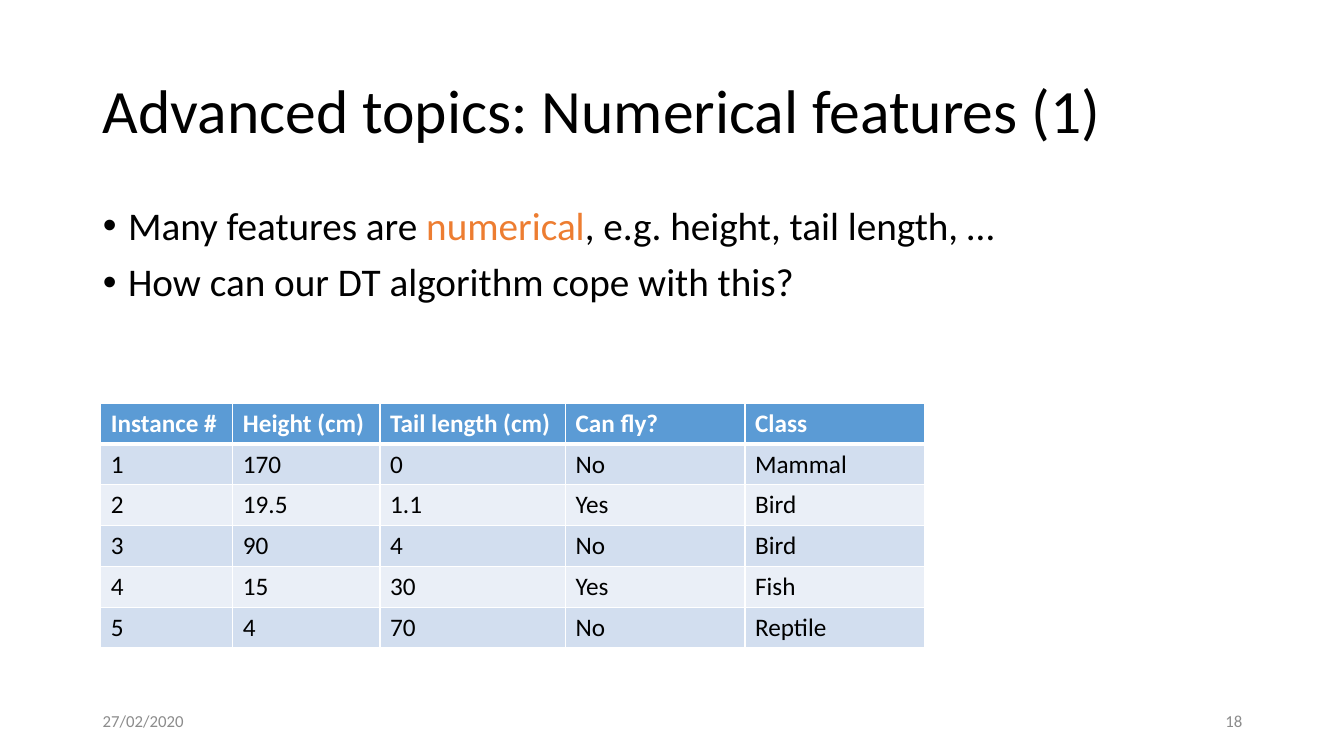
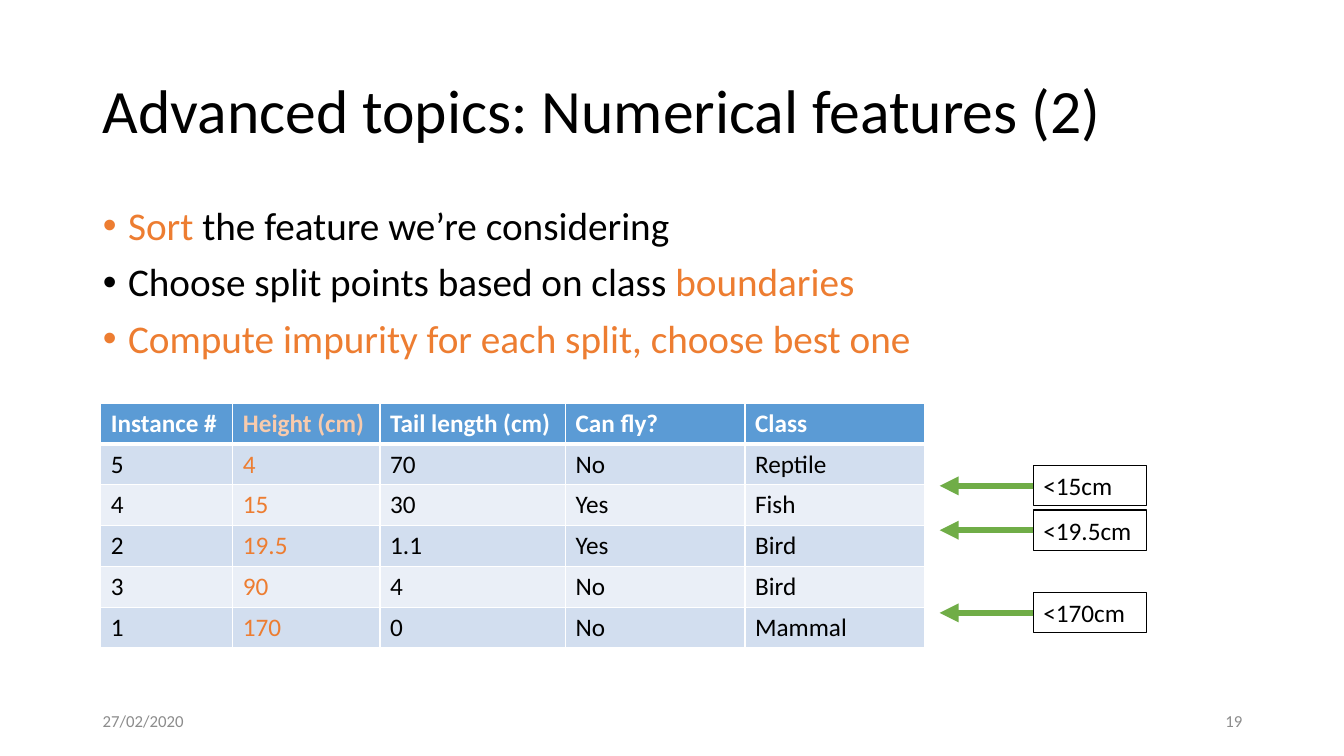
from lxml.etree import SubElement
from pptx import Presentation
from pptx.dml.color import RGBColor
from pptx.enum.shapes import MSO_CONNECTOR, MSO_SHAPE
from pptx.enum.text import MSO_ANCHOR, PP_ALIGN
from pptx.oxml.ns import qn
from pptx.util import Inches, Pt

BLACK = RGBColor(0x00, 0x00, 0x00)
WHITE = RGBColor(0xFF, 0xFF, 0xFF)
GREY = RGBColor(0x8C, 0x8C, 0x8C)
ORANGE = RGBColor(0xED, 0x7D, 0x31)
PEACH = RGBColor(0xF8, 0xCB, 0xAD)
GREEN = RGBColor(0x70, 0xAD, 0x47)
BLUE = RGBColor(0x5B, 0x9B, 0xD5)
BANDS = RGBColor(0xD2, 0xDE, 0xEF), RGBColor(0xEA, 0xEF, 0xF7)

FONT = "Calibri"
DATE = "27/02/2020"
HEADS = ["Instance #", "Height (cm)", "Tail length (cm)", "Can fly?", "Class"]
WIDTHS = [1.31, 1.46, 1.84, 1.78, 1.78]
ROWS = [
    ["1", "170", "0", "No", "Mammal"],
    ["2", "19.5", "1.1", "Yes", "Bird"],
    ["3", "90", "4", "No", "Bird"],
    ["4", "15", "30", "Yes", "Fish"],
    ["5", "4", "70", "No", "Reptile"],
]
KEY = 1
SPLITS = [("<15cm", 4.62), ("<19.5cm", 5.06), ("<170cm", 5.88)]


def write(para, text, size=18, color=BLACK, bold=False, align=PP_ALIGN.LEFT,
          lead=None, before=None):
    """Fill a paragraph, with the parts between asterisks in orange."""
    para.alignment = align
    para.line_spacing = lead
    para.space_before = before
    for num, part in enumerate(text.split("*")):
        if part:
            run = para.add_run()
            run.text = part
            run.font.name = FONT
            run.font.size = Pt(size)
            run.font.bold = bold
            run.font.color.rgb = ORANGE if num % 2 else color


def place(shape, left, top, width, height):
    """Move a shape to a box given in inches."""
    shape.left, shape.top = Inches(left), Inches(top)
    shape.width, shape.height = Inches(width), Inches(height)


def add_foot(slide, text, left, top, align):
    """Add one footer text."""
    box = slide.shapes.add_textbox(
        Inches(left), Inches(top), Inches(3), Inches(0.4))
    box.text_frame.word_wrap = True
    box.text_frame.vertical_anchor = MSO_ANCHOR.MIDDLE
    write(box.text_frame.paragraphs[0], text, size=12, color=GREY, align=align)


def add_list(body, items):
    """Fill the body placeholder with bulleted items."""
    frame = body.text_frame
    for num, item in enumerate(items):
        para = frame.add_paragraph() if num else frame.paragraphs[0]
        write(para, item, size=28, lead=0.9, before=Pt(10))
        props = para._p.get_or_add_pPr()
        props.set("marL", str(Inches(0.25)))
        props.set("indent", str(-Inches(0.25)))


def add_page(deck, title, items, page):
    """Add a slide with title, list and footers."""
    slide = deck.slides.add_slide(deck.slide_layouts[1])
    head, body = slide.placeholders
    place(head, 0.92, 0.4, 11.5, 1.45)
    place(body, 0.92, 2, 11.5, 4.76)
    head.text_frame.vertical_anchor = MSO_ANCHOR.MIDDLE
    write(head.text_frame.paragraphs[0], title, size=44, lead=0.9)
    add_list(body, items)
    add_foot(slide, DATE, 0.92, 6.95, PP_ALIGN.LEFT)
    add_foot(slide, str(page), 9.42, 6.95, PP_ALIGN.RIGHT)
    return slide


def add_edge(cell, side, width):
    """Draw one white cell border."""
    line = SubElement(cell._tc.get_or_add_tcPr(), qn("a:" + side),
                      w=str(Pt(width)))
    fill = SubElement(line, qn("a:solidFill"))
    SubElement(fill, qn("a:srgbClr"), val=str(WHITE))


def add_grid(slide, rows, left, top, height, mark=None):
    """Add the data table, with an optional marked column."""
    data = [HEADS] + rows
    table = slide.shapes.add_table(
        len(data), len(HEADS), Inches(left), Inches(top),
        Inches(sum(WIDTHS)), Inches(height)).table
    for col, width in zip(table.columns, WIDTHS):
        col.width = Inches(width)
    for row, texts in enumerate(data):
        for col, text in enumerate(texts):
            cell = table.cell(row, col)
            for side in ("lnL", "lnR", "lnT", "lnB"):
                thick = (row, side) in ((0, "lnB"), (1, "lnT"))
                add_edge(cell, side, 3 if thick else 1)
            cell.fill.solid()
            cell.fill.fore_color.rgb = BANDS[(row - 1) % 2] if row else BLUE
            plain, accent = (BLACK, ORANGE) if row else (WHITE, PEACH)
            write(cell.text_frame.paragraphs[0], text, bold=row == 0,
                  color=accent if col == mark else plain)


def add_split(slide, text, left, top, width=1.12, height=0.4, reach=0.93):
    """Add a boxed split point with an arrow to its left."""
    box = slide.shapes.add_shape(
        MSO_SHAPE.RECTANGLE, Inches(left), Inches(top),
        Inches(width), Inches(height))
    box.shadow.inherit = False
    box.fill.background()
    box.line.color.rgb = BLACK
    box.line.width = Pt(0.75)
    box.text_frame.vertical_anchor = MSO_ANCHOR.TOP
    write(box.text_frame.paragraphs[0], text)
    mid = Inches(top + height / 2)
    arrow = slide.shapes.add_connector(
        MSO_CONNECTOR.STRAIGHT, Inches(left), mid, Inches(left - reach), mid)
    arrow.begin_connect(box, 1)
    arrow.line.color.rgb = GREEN
    arrow.line.width = Pt(4.5)
    SubElement(arrow.line._get_or_add_ln(), qn("a:tailEnd"), type="triangle")
    SubElement(arrow._element.spPr, qn("a:effectLst"))


def main():
    """Build and save the two slides."""
    deck = Presentation()
    deck.slide_width, deck.slide_height = Inches(13.33), Inches(7.5)
    title = "Advanced topics: Numerical features ({})"
    first = add_page(deck, title.format(1), [
        "Many features are *numerical*, e.g. height, tail length, …",
        "How can our DT algorithm cope with this?",
    ], 18)
    add_grid(first, ROWS, 1, 4, 2.43)
    second = add_page(deck, title.format(2), [
        "*Sort *the feature we’re considering",
        "Choose split points based on class *boundaries*",
        "*Compute impurity for each split, choose best one*",
    ], 19)
    ranked = sorted(ROWS, key=lambda row: float(row[KEY]))
    add_grid(second, ranked, 1, 4, 2.43, mark=KEY)
    for text, top in SPLITS:
        add_split(second, text, 10.25, top)
    deck.save("out.pptx")


if __name__ == "__main__":
    main()
